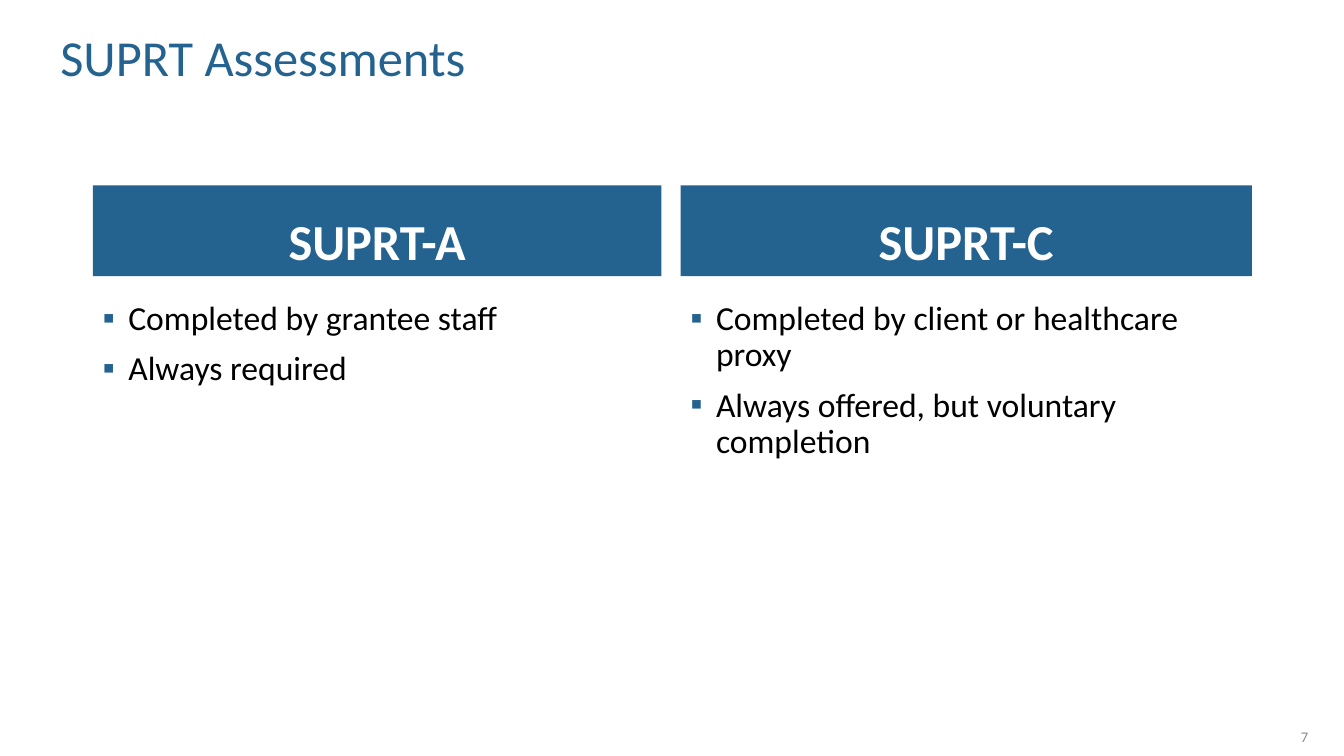
from lxml import etree
from pptx import Presentation
from pptx.dml.color import RGBColor
from pptx.enum import text
from pptx.oxml.ns import qn
from pptx.util import Cm, Pt

# Content
TITLE = "SUPRT Assessments"
PAGE = "7"
COLS = [
    # left, width, heading, points
    (2.34, 14.33, "SUPRT-A",
     ["Completed by grantee staff", "Always required"]),
    (17.15, 14.4, "SUPRT-C",
     ["Completed by client or healthcare proxy",
      "Always offered, but voluntary completion"]),
]
HEAD = (4.67, 2.29)  # top, height
LIST = (7.47, 10.24)
INK = {"blue": "24628F", "white": "FFFFFF", "black": "000000", "gray": "8C8C8C"}
LEFT, MID, RIGHT = text.PP_ALIGN.LEFT, text.PP_ALIGN.CENTER, text.PP_ALIGN.RIGHT
ANCHOR = text.MSO_ANCHOR


def rgb(name):
    return RGBColor.from_string(INK[name])


def bullet(para):
    props = para._p.get_or_add_pPr()
    props.set("marL", str(Cm(0.64)))
    props.set("indent", str(-Cm(0.64)))
    tint = etree.SubElement(props, qn("a:buClr"))
    etree.SubElement(tint, qn("a:srgbClr"), val=INK["blue"])
    etree.SubElement(props, qn("a:buFont"), typeface="Calibri")
    etree.SubElement(props, qn("a:buChar"), char="▪")


def write(shape, box, lines, size, ink, align=LEFT, anchor=ANCHOR.TOP,
          bold=False, marks=False, lead=0.9):
    shape.left, shape.top, shape.width, shape.height = map(Cm, box)
    frame = shape.text_frame
    frame.text = "\n".join(lines)
    frame.word_wrap = True
    frame.auto_size = text.MSO_AUTO_SIZE.NONE
    frame.vertical_anchor = anchor
    for i, para in enumerate(frame.paragraphs):
        if marks:
            bullet(para)
        para.alignment = align
        para.line_spacing = lead
        para.space_before = Pt(10 if i else 0)
        font = para.font
        font.name, font.size, font.bold = "Calibri", Pt(size), bold
        font.color.rgb = rgb(ink)


deck = Presentation()
deck.slide_width, deck.slide_height = Cm(33.87), Cm(19.05)
slide = deck.slides.add_slide(deck.slide_layouts.get_by_name("Comparison"))
title, *parts = slide.placeholders

# Title
write(title, (0, 0, 33.87, 3.05), [TITLE], 36, "blue", anchor=ANCHOR.MIDDLE)
title.text_frame.margin_left = Cm(1.52)

# Two columns: heading bar above a list
for (left, width, name, points), head, body in zip(COLS, parts[::2], parts[1::2]):
    write(head, (left, HEAD[0], width, HEAD[1]), [name], 36, "white",
          MID, ANCHOR.BOTTOM, bold=True)
    head.fill.solid()
    head.fill.fore_color.rgb = rgb("blue")
    write(body, (left, LIST[0], width, LIST[1]), points, 24, "black", marks=True)

# Page number
page = slide.shapes.add_textbox(0, 0, 0, 0)
write(page, (25.6, 18.06, 7.62, 1.02), [PAGE], 10.5, "gray",
      RIGHT, ANCHOR.MIDDLE, lead=1.0)

deck.save("out.pptx")
